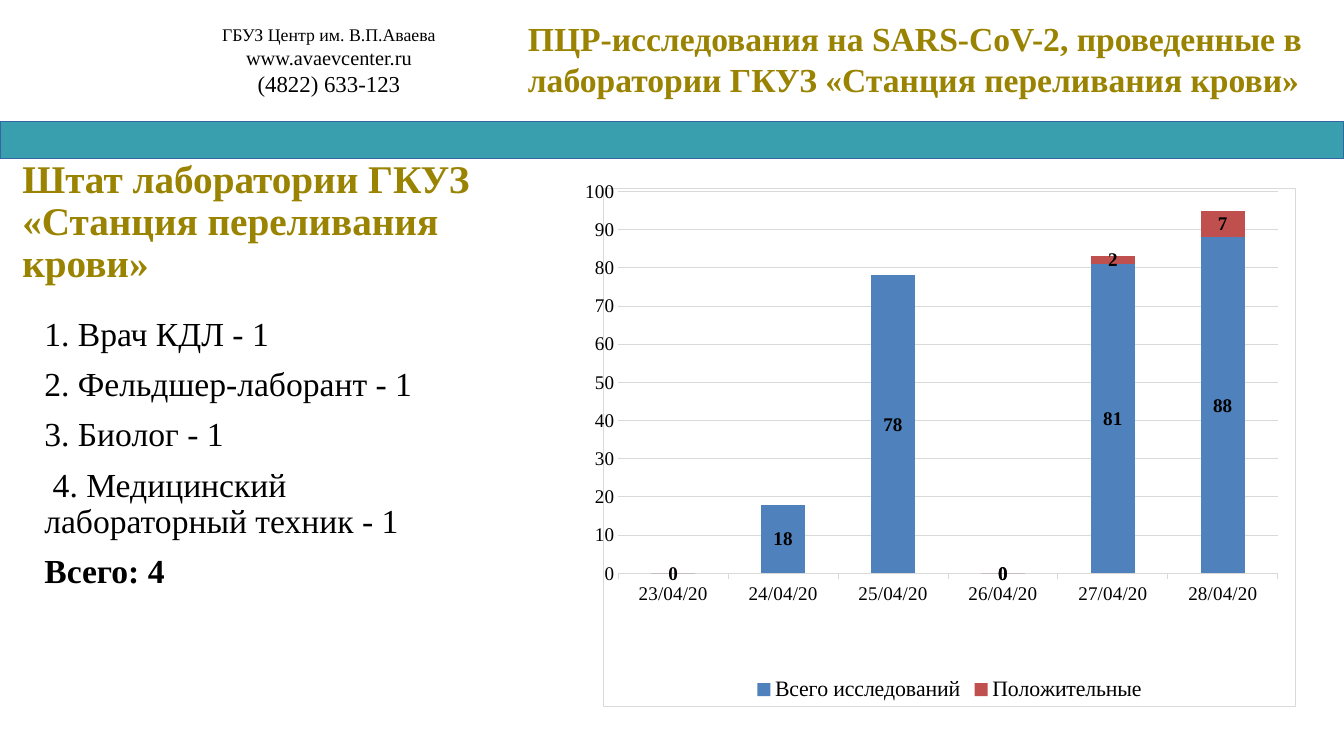
from pptx import Presentation
from pptx.chart.data import CategoryChartData
from pptx.dml.color import RGBColor
from pptx.enum.chart import XL_CHART_TYPE, XL_LABEL_POSITION, XL_LEGEND_POSITION, XL_TICK_MARK
from pptx.enum.shapes import MSO_SHAPE
from pptx.enum.text import MSO_ANCHOR, MSO_AUTO_SIZE, PP_ALIGN
from pptx.oxml import parse_xml
from pptx.oxml.ns import nsdecls, qn
from pptx.util import Pt

STACKED = XL_CHART_TYPE.COLUMN_STACKED
CENTER_LABEL = XL_LABEL_POSITION.CENTER
BOTTOM = XL_LEGEND_POSITION.BOTTOM
NO_TICK, TICK_OUT = XL_TICK_MARK.NONE, XL_TICK_MARK.OUTSIDE
RECT = MSO_SHAPE.RECTANGLE
LEFT, CENTER = PP_ALIGN.LEFT, PP_ALIGN.CENTER
TOP_ANCHOR, BOTTOM_ANCHOR = MSO_ANCHOR.TOP, MSO_ANCHOR.BOTTOM
NO_AUTOFIT = MSO_AUTO_SIZE.NONE

FONT = "Times New Roman"
COLORS = {"text": "000000", "heading": "998300", "band": "399FAE", "band_line": "3465A4",
          "grid": "D9D9D9", "paper": "FFFFFF", "total": "4F81BD", "positive": "C0504D"}

CONTACTS = [("ГБУЗ Центр им. В.П.Аваева", 12.7),
            ("www.avaevcenter.ru", 14.5),
            ("(4822) 633-123", 16.3)]
TOPIC = "ПЦР-исследования на SARS-CoV-2, проведенные в лаборатории ГКУЗ «Станция переливания крови»"
STAFF_TITLE = "Штат лаборатории ГКУЗ «Станция переливания крови»"
STAFF = ["1. Врач КДЛ - 1", "2. Фельдшер-лаборант - 1", "3. Биолог - 1",
         " 4. Медицинский лабораторный техник - 1", "Всего: 4"]
DATES = [f"{day}/04/20" for day in range(23, 29)]
# name, values, colour, points without a label
SERIES = [("Всего исследований", (0, 18, 78, 0, 81, 88), "total", ()),
          ("Положительные", (0, 0, 0, 0, 2, 7), "positive", (0, 1, 2))]


def rgb(name):
    return RGBColor.from_string(COLORS[name])


def style(font, size, color="text", bold=False):
    font.name, font.size, font.bold = FONT, Pt(size), bold
    font.color.rgb = rgb(color)


def place(sp, box):
    sp.left, sp.top, sp.width, sp.height = map(Pt, box)


def write(tf, lines, align=LEFT):
    """Fill a frame with (text, size, colour, bold) paragraphs."""
    tf.word_wrap = True
    tf.text = "\n".join(line[0] for line in lines)
    for p, (_, size, color, bold) in zip(tf.paragraphs, lines):
        p.alignment = align
        for r in p.runs:
            style(r.font, size, color, bold)


def add_header(s, box):
    x, y, w, h = box
    # Band under the header
    band = s.shapes.add_shape(RECT, Pt(x), Pt(y + 87), Pt(w), Pt(h - 87))
    band.shadow.inherit = False
    band.fill.solid()
    band.fill.fore_color.rgb = rgb("band")
    band.line.color.rgb = rgb("band_line")
    band.line.width = Pt(0.75)
    # Contacts
    sp = s.shapes.add_textbox(Pt(x + 124.5), Pt(y + 13.5), Pt(221), Pt(59))
    write(sp.text_frame, [(text, size, "text", False) for text, size in CONTACTS], CENTER)
    # Topic
    sp = s.shapes.add_textbox(Pt(x + 370), Pt(y + 9.5), Pt(w - 370), Pt(65.5))
    write(sp.text_frame, [(TOPIC, 24, "heading", True)])


def add_staff(s, box):
    x, y, w, h = box
    # Heading
    title = s.shapes.title
    place(title, (x, y, w, 81.5))
    tf = title.text_frame
    tf.margin_left = tf.margin_right = tf.margin_top = tf.margin_bottom = 0
    tf.vertical_anchor, tf.auto_size = BOTTOM_ANCHOR, NO_AUTOFIT
    write(tf, [(STAFF_TITLE, 28, "heading", True)])
    tf.paragraphs[0].line_spacing = 0.9
    # Staff list
    body = s.placeholders[1]
    place(body, (x + 8.5, y + 100, w - 8.5, h - 100))
    tf = body.text_frame
    tf.vertical_anchor, tf.auto_size = TOP_ANCHOR, NO_AUTOFIT
    tf.margin_right = Pt(20)
    write(tf, [(text, 24, "text", text is STAFF[-1]) for text in STAFF])
    for i, p in enumerate(tf.paragraphs):
        pPr = p._p.get_or_add_pPr()
        pPr.set("marL", "0")
        pPr.set("indent", "0")
        pPr.append(parse_xml(f"<a:buNone {nsdecls('a')}/>"))
        p.line_spacing = 0.9
        p.space_before = Pt(10 if i else 0)


def add_tests_chart(s, box):
    data = CategoryChartData()
    data.categories = DATES
    for name, values, _, _ in SERIES:
        data.add_series(name, values)
    chart = s.shapes.add_chart(STACKED, *map(Pt, box), data).chart
    chart.has_title = False
    style(chart.font, 14)
    # Legend
    chart.has_legend = True
    chart.legend.position = BOTTOM
    chart.legend.include_in_layout = False
    style(chart.legend.font, 16)
    # Axes
    cat, val = chart.category_axis, chart.value_axis
    for axis in (cat, val):
        style(axis.tick_labels.font, 14)
    cat.major_tick_mark, val.major_tick_mark = TICK_OUT, NO_TICK
    val.minimum_scale, val.maximum_scale, val.major_unit = 0, 100, 10
    val.has_major_gridlines = True
    val.format.line.fill.background()
    for line in (cat.format.line, val.major_gridlines.format.line):
        line.color.rgb = rgb("grid")
        line.width = Pt(0.75)
    # Columns and their labels
    plot = chart.plots[0]
    plot.gap_width, plot.overlap, plot.vary_by_categories = 150, 100, False
    for series, (_, _, color, unlabelled) in zip(plot.series, SERIES):
        series.format.fill.solid()
        series.format.fill.fore_color.rgb = rgb(color)
        labels = series.data_labels
        labels.show_value, labels.position = True, CENTER_LABEL
        style(labels.font, 14, bold=True)
        dLbls = series._element.find(qn("c:dLbls"))
        for i, point in enumerate(unlabelled):
            dLbls.insert(i, parse_xml(f'<c:dLbl {nsdecls("c")}><c:idx val="{point}"/>'
                                      '<c:delete val="1"/></c:dLbl>'))
    # Plot area position
    c_chart = chart._chartSpace.find(qn("c:chart"))
    plot_area = c_chart.find(qn("c:plotArea"))
    for old in plot_area.findall(qn("c:layout")):
        plot_area.remove(old)
    sizes = "".join(f'<c:{k} val="{v}"/>' for k, v in
                    (("x", 0.022), ("y", 0.005), ("w", 0.952), ("h", 0.738)))
    plot_area.insert(0, parse_xml(
        f'<c:layout {nsdecls("c")}><c:manualLayout><c:layoutTarget val="inner"/>'
        f'<c:xMode val="edge"/><c:yMode val="edge"/>{sizes}</c:manualLayout></c:layout>'))
    # Chart background and border
    c_chart.addnext(parse_xml(
        f'<c:spPr {nsdecls("c", "a")}>'
        f'<a:solidFill><a:srgbClr val="{COLORS["paper"]}"/></a:solidFill>'
        f'<a:ln w="{Pt(0.75)}"><a:solidFill><a:srgbClr val="{COLORS["grid"]}"/></a:solidFill></a:ln>'
        '</c:spPr>'))


def main():
    prs = Presentation()
    prs.slide_width, prs.slide_height = Pt(960), Pt(540)
    s = prs.slides.add_slide(prs.slide_layouts[1])
    add_header(s, (0, 0, 960, 113))
    add_tests_chart(s, (418, 129, 508, 376))
    add_staff(s, (16, 123, 346, 382))
    prs.save("out.pptx")


if __name__ == "__main__":
    main()
